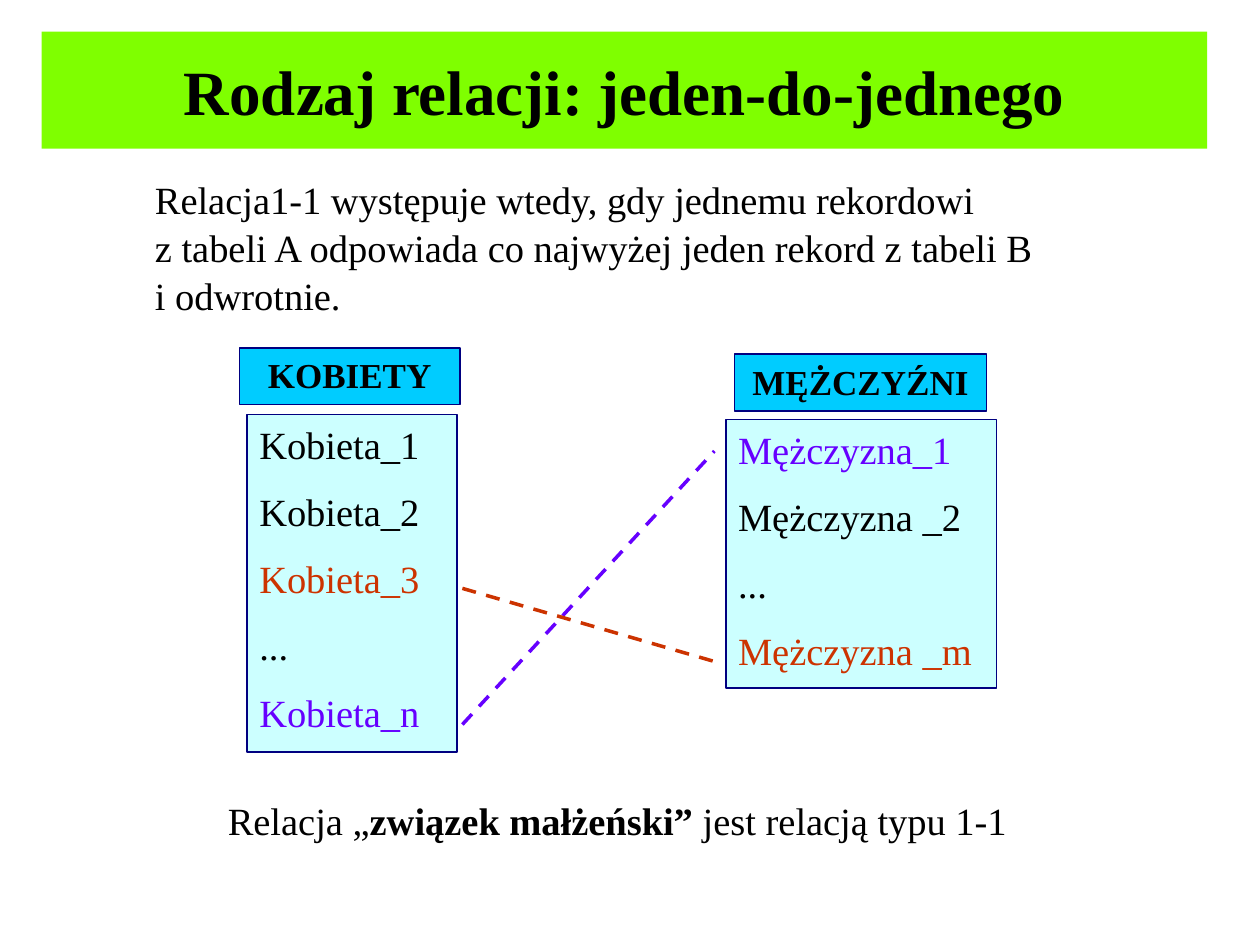
from lxml import etree
from pptx import Presentation
from pptx.dml.color import RGBColor
from pptx.enum.dml import MSO_LINE_DASH_STYLE as Dash
from pptx.enum.shapes import MSO_CONNECTOR, MSO_SHAPE
from pptx.enum.text import MSO_ANCHOR, PP_ALIGN
from pptx.oxml.ns import qn
from pptx.util import Inches, Pt

BLACK, NAVY, ORANGE, VIOLET = "000000", "000080", "CC3300", "6600FF"
LIME, SKY, PALE = "7FFF00", "00CCFF", "CCFFFF"


def rgb(value):
    return RGBColor.from_string(value)


def style(paragraph, size, color=BLACK, bold=False):
    for run in paragraph.runs:
        run.font.name = "Times New Roman"
        run.font.size = Pt(size)
        run.font.color.rgb = rgb(color)
        run.font.bold = bold


prs = Presentation()
prs.slide_width, prs.slide_height = Inches(10), Inches(7.5)
slide = prs.slides.add_slide(prs.slide_layouts[5])
shapes = slide.shapes

# Title band
title = shapes.title
title.left, title.top = Inches(0.33), Inches(0.25)
title.width, title.height = Inches(9.25), Inches(0.93)
title.fill.solid()
title.fill.fore_color.rgb = rgb(LIME)
title.text_frame.text = "Rodzaj relacji: jeden-do-jednego"
title.text_frame.vertical_anchor = MSO_ANCHOR.MIDDLE
title.text_frame.paragraphs[0].alignment = PP_ALIGN.CENTER
style(title.text_frame.paragraphs[0], 36, bold=True)

# Definition
definition = shapes.add_textbox(Inches(0.75), Inches(1.33), Inches(8.83), Inches(1.17)).text_frame
definition.word_wrap = True
definition.margin_left = Inches(0.48)
definition.text = ("Relacja1-1 występuje wtedy, gdy jednemu rekordowi \v"
                   "z tabeli A odpowiada co najwyżej jeden rekord z tabeli B \v"
                   "i odwrotnie.")
definition.paragraphs[0].line_spacing = 1.04
style(definition.paragraphs[0], 22)

# Both tables: a list of records and a heading above it
women = [("Kobieta_1", BLACK), ("Kobieta_2", BLACK), ("Kobieta_3", ORANGE),
         ("...", BLACK), ("Kobieta_n", VIOLET)]
men = [("Mężczyzna_1", VIOLET), ("Mężczyzna _2", BLACK), ("...", BLACK),
       ("Mężczyzna _m", ORANGE)]
boxes = [
    ((1.96, 3.29, 1.67, 2.68), PALE, women, 22, PP_ALIGN.LEFT),
    ((1.9, 2.76, 1.75, 0.45), SKY, [("KOBIETY", BLACK)], 20, PP_ALIGN.CENTER),
    ((5.76, 3.33, 2.15, 2.13), PALE, men, 22, PP_ALIGN.LEFT),
    ((5.83, 2.81, 2, 0.45), SKY, [("MĘŻCZYŹNI", BLACK)], 20, PP_ALIGN.CENTER),
]
for place, fill, records, size, alignment in boxes:
    box = shapes.add_shape(MSO_SHAPE.RECTANGLE, *map(Inches, place))
    box.shadow.inherit = False
    box.fill.solid()
    box.fill.fore_color.rgb = rgb(fill)
    box.line.color.rgb = rgb(NAVY)
    box.line.width = Pt(1)
    frame = box.text_frame
    frame.vertical_anchor = MSO_ANCHOR.TOP
    frame.word_wrap = True
    frame.text = "\n".join(name for name, _ in records)
    for row, (paragraph, (_, color)) in enumerate(zip(frame.paragraphs, records)):
        paragraph.alignment = alignment
        paragraph.space_before = Pt(12 if row else 0)
        style(paragraph, size, color, bold=fill == SKY)

# Pairs of related records
for start, end, color in [(5.75, 3.58, VIOLET), (4.67, 5.25, ORANGE)]:
    pair = shapes.add_connector(MSO_CONNECTOR.STRAIGHT, Inches(3.67), Inches(start),
                                Inches(5.67), Inches(end))
    pair.line.color.rgb = rgb(color)
    pair.line.width = Pt(2)
    pair.line.dash_style = Dash.DASH
    etree.SubElement(pair.element.spPr, qn("a:effectLst"))

# Conclusion
conclusion = shapes.add_textbox(Inches(1.71), Inches(6.28), Inches(6.39), Inches(0.47)).text_frame
conclusion.word_wrap = False
sentence = conclusion.paragraphs[0]
for part in ("Relacja „", "związek małżeński”", " jest relacją typu 1-1"):
    sentence.add_run().text = part
style(sentence, 22)
sentence.runs[1].font.bold = True

prs.save("out.pptx")
